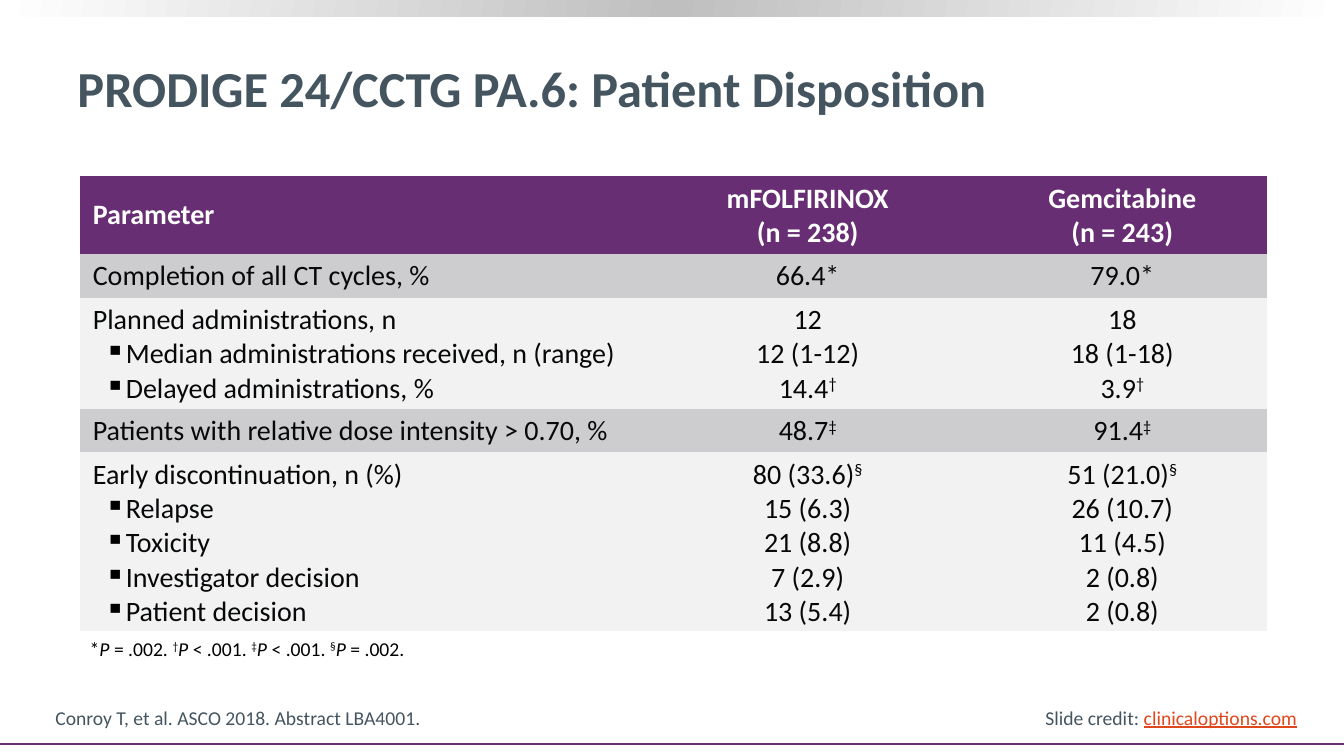
from itertools import groupby
from lxml import etree
from pptx import Presentation
from pptx import util as u
from pptx.dml.color import RGBColor
from pptx.enum import shapes, text
from pptx.oxml import parse_xml
from pptx.oxml.ns import nsdecls, qn

PURPLE = RGBColor(0x68, 0x2E, 0x74)
SLATE = RGBColor(0x45, 0x55, 0x60)
ORANGE = RGBColor(0xE1, 0x47, 0x1D)
INK = RGBColor(0x07, 0x08, 0x0A)
BLACK = RGBColor(0, 0, 0)
WHITE = RGBColor(0xFF, 0xFF, 0xFF)
GREY = RGBColor(0xCD, 0xCD, 0xCF)
PALE = RGBColor(0xF2, 0xF2, 0xF2)

deck = Presentation()
deck.slide_width = u.Inches(13.33)
deck.slide_height = u.Inches(7.5)
COL = deck.slide_width / 100
ROW = deck.slide_height / 100
page = deck.slides.add_slide(deck.slide_layouts[6])


def add_spans(para, words, size, color, bold=False, italic=False):
    for raised, letters in groupby(words, key=lambda letter: letter in "†‡§"):
        span = para.add_run()
        span.text = "".join(letters)
        span.font.name = "Calibri"
        span.font.size = u.Pt(size)
        span.font.bold = bold
        span.font.italic = italic
        span.font.color.rgb = BLACK if raised else color
        if raised:
            span.font._element.set("baseline", "30000")
    return span


def add_label(left, top, width, height, anchor, wrap=True):
    box = page.shapes.add_textbox(
        int(left * COL), int(top * ROW), int(width * COL), int(height * ROW))
    box.text_frame.word_wrap = wrap
    box.text_frame.vertical_anchor = anchor
    return box.text_frame.paragraphs[0]


band = page.shapes.add_shape(
    shapes.MSO_SHAPE.RECTANGLE, 0, 0, deck.slide_width, int(2.13 * ROW))
band.shadow.inherit = False
band.line.fill.background()
band.fill.gradient()
gradient = band._element.spPr.find(qn("a:gradFill"))
stops = "".join(
    f'<a:gs pos="{place}"><a:srgbClr val="{shade}"/></a:gs>'
    for place, shade in [(0, "FFFFFF"), (50000, "BFBFBF"), (100000, "FFFFFF")])
gradient.getparent().replace(gradient, parse_xml(
    f'<a:gradFill {nsdecls("a")} rotWithShape="1"><a:gsLst>{stops}</a:gsLst>'
    '<a:lin ang="11400000" scaled="0"/></a:gradFill>'))

rule = page.shapes.add_connector(
    shapes.MSO_CONNECTOR.STRAIGHT,
    0, int(98.4 * ROW), deck.slide_width, int(98.4 * ROW))
rule.line.color.rgb = PURPLE
rule.line.width = u.Pt(1.5)
etree.SubElement(rule._element.spPr, qn("a:effectLst"))

title = add_label(5.03, 3.47, 89.2, 16.13, text.MSO_ANCHOR.MIDDLE)
add_spans(title, "PRODIGE 24/CCTG PA.6: Patient Disposition", 36, SLATE, bold=True)

credit = add_label(77.04, 92.67, 20.41, 4.53, text.MSO_ANCHOR.TOP, wrap=False)
add_spans(credit, "Slide credit: ", 14, SLATE)
address = add_spans(credit, "clinicaloptions.com", 14, ORANGE)
address.font.underline = True

citation = add_label(3.38, 92.67, 65.72, 4.53, text.MSO_ANCHOR.BOTTOM)
add_spans(citation, "Conroy T, et al. ASCO 2018. Abstract LBA4001.", 14, SLATE)

rows = [
    (10.27, PURPLE, [["Parameter"], ["mFOLFIRINOX", "(n = 238)"],
                     ["Gemcitabine", "(n = 243)"]]),
    (5.75, GREY, [["Completion of all CT cycles, %"], ["66.4*"], ["79.0*"]]),
    (14.68, PALE, [
        ["Planned administrations, n", "Median administrations received, n (range)",
         "Delayed administrations, %"],
        ["12", "12 (1-12)", "14.4†"],
        ["18", "18 (1-18)", "3.9†"]]),
    (5.75, GREY, [["Patients with relative dose intensity > 0.70, %"],
                  ["48.7‡"], ["91.4‡"]]),
    (23.55, PALE, [
        ["Early discontinuation, n (%)", "Relapse", "Toxicity",
         "Investigator decision", "Patient decision"],
        ["80 (33.6)§", "15 (6.3)", "21 (8.8)", "7 (2.9)", "13 (5.4)"],
        ["51 (21.0)§", "26 (10.7)", "11 (4.5)", "2 (0.8)", "2 (0.8)"]]),
]
columns = [41.49, 25.36, 21.46]

table = page.shapes.add_table(
    len(rows), len(columns), int(5.93 * COL), int(23.33 * ROW),
    int(sum(columns) * COL), int(60 * ROW)).table
table.horz_banding = False
table._tbl.tblPr.find(qn("a:tableStyleId")).text = (
    "{2D5ABB26-0587-4C30-8999-92F81FD0307C}")
for column, width in zip(table.columns, columns):
    column.width = int(width * COL)

for row, (height, fill, contents) in zip(table.rows, rows):
    row.height = int(height * ROW)
    header = fill == PURPLE
    for index, (cell, lines) in enumerate(zip(row.cells, contents)):
        cell.fill.solid()
        cell.fill.fore_color.rgb = fill
        cell.margin_left = cell.margin_right = u.Inches(0.13)
        cell.margin_top = cell.margin_bottom = u.Inches(0.05)
        top_aligned = index == 0 and fill != PURPLE
        cell.vertical_anchor = (
            text.MSO_ANCHOR.TOP if top_aligned else text.MSO_ANCHOR.MIDDLE)
        for number, words in enumerate(lines):
            frame = cell.text_frame
            para = frame.add_paragraph() if number else frame.paragraphs[0]
            if index:
                para.alignment = text.PP_ALIGN.CENTER
            elif number:
                props = para._p.get_or_add_pPr()
                props.set("marL", str(u.Inches(0.31)))
                props.set("indent", str(u.Inches(-0.19)))
                tint = etree.SubElement(props, qn("a:buClr"))
                etree.SubElement(tint, qn("a:srgbClr"), val="000000")
                etree.SubElement(props, qn("a:buChar"), char="▪")
            add_spans(para, words, 20, WHITE if header else INK, bold=header)

footnote = add_label(5.93, 83.6, 25.36, 4.53, text.MSO_ANCHOR.TOP, wrap=False)
for mark, value in [("*", "= .002. "), ("†", "< .001. "),
                    ("‡", "< .001. "), ("§", "= .002.")]:
    add_spans(footnote, mark, 14, BLACK)
    add_spans(footnote, "P ", 14, BLACK, italic=True)
    add_spans(footnote, value, 14, BLACK)

deck.save("out.pptx")
